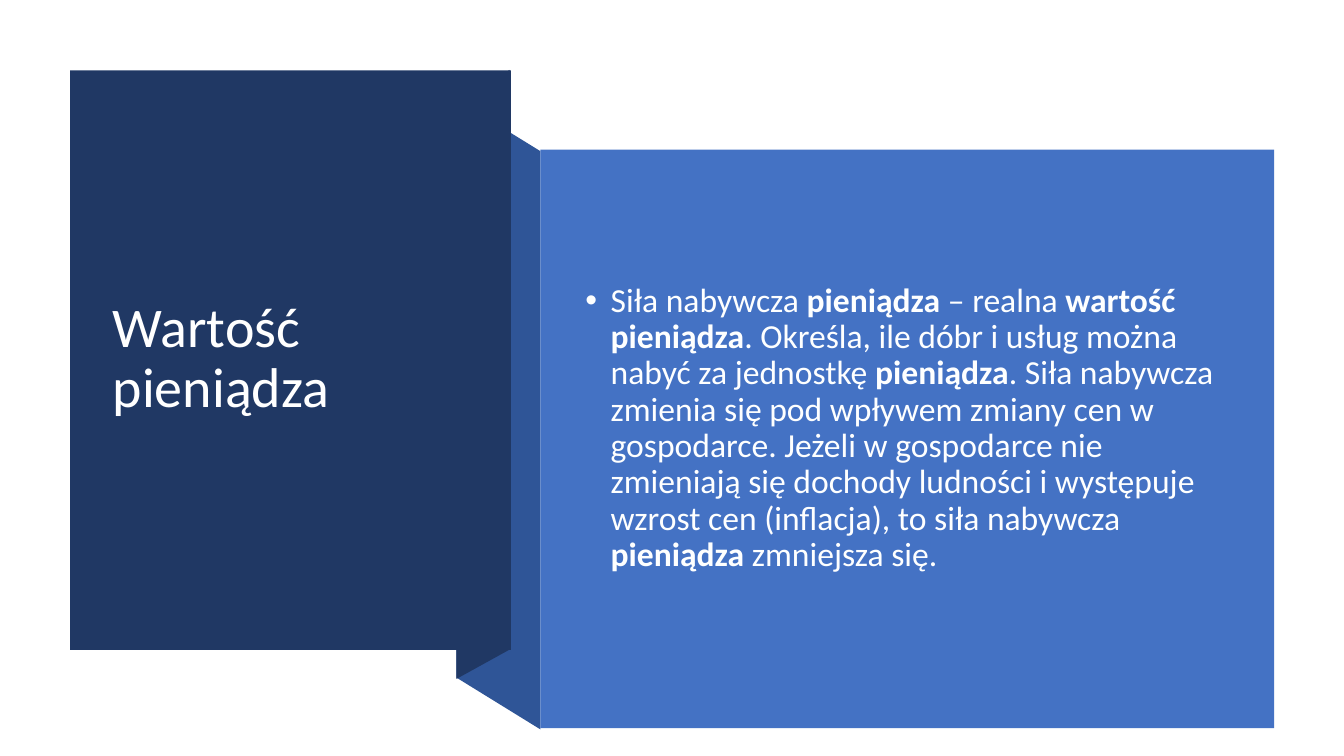
"""Builds a slide on the value of money with a folded two-panel banner."""
import pptx
import pptx.dml.color
import pptx.enum.shapes
import pptx.enum.text
import pptx.util
from dataclasses import dataclass
from lxml import etree

Pt = pptx.util.Pt
RGB = pptx.dml.color.RGBColor.from_string


@dataclass(frozen=True)
class Theme:
    navy: str = "203864"
    fold: str = "2F5597"
    blue: str = "4472C4"
    title_text: str = "FFFFFF"
    body_text: str = "FEFFFF"
    font: str = "Calibri"
    title_size: int = 40
    body_size: int = 24


theme = Theme()


def paint(shape, color):
    shape.shadow.inherit = False
    shape.fill.solid()
    shape.fill.fore_color.rgb = RGB(color)
    shape.line.fill.background()


def set_text_style(box, place, color, size):
    box.left, box.top, box.width, box.height = map(Pt, place)
    box.text_frame.word_wrap = True
    box.text_frame.auto_size = pptx.enum.text.MSO_AUTO_SIZE.NONE
    box.text_frame.vertical_anchor = pptx.enum.text.MSO_ANCHOR.MIDDLE
    para = box.text_frame.paragraphs[0]
    para.alignment = pptx.enum.text.PP_ALIGN.LEFT
    para.line_spacing = 0.9
    para.font.name = theme.font
    para.font.size = Pt(size)
    para.font.color.rgb = RGB(color)
    return para


deck = pptx.Presentation()
deck.slide_width, deck.slide_height = Pt(960), Pt(540)
page = deck.slides.add_slide(deck.slide_layouts[5])

folds = [
    (theme.fold, [(385.9, 520.6), (326.2, 483.8), (326.2, 71.3), (385.9, 108)]),
    (theme.navy, [(364.5, 463.7), (326.2, 484.6), (326.2, 70.6), (364.5, 49.7)]),
]
for color, corners in folds:
    builder = page.shapes.build_freeform(*corners[0], scale=Pt(1))
    builder.add_line_segments(corners[1:], close=True)
    paint(builder.convert_to_shape(), color)

panels = [
    (theme.navy, (50, 50.2, 314.9, 414)),
    (theme.blue, (385.9, 106.9, 524.2, 413.3)),
]
for color, place in panels:
    panel = page.shapes.add_shape(pptx.enum.shapes.MSO_SHAPE.RECTANGLE, *map(Pt, place))
    paint(panel, color)

title = page.shapes.title
title.text_frame.text = "Wartość pieniądza"
set_text_style(title, (73.4, 77, 267.1, 359.3), theme.title_text, theme.title_size)
panel.element.addnext(title.element)

body_place = (411.1, 135.4, 468.7, 341.3)
body = page.shapes.add_textbox(*map(Pt, body_place))
para = set_text_style(body, body_place, theme.body_text, theme.body_size)
para.space_before = Pt(10)
definition = [
    ("Siła nabywcza ", False),
    ("pieniądza", True),
    (" – realna ", False),
    ("wartość pieniądza", True),
    (". Określa, ile dóbr i usług można nabyć za jednostkę ", False),
    ("pieniądza", True),
    (". Siła nabywcza zmienia się pod wpływem zmiany cen w gospodarce. "
     "Jeżeli w gospodarce nie zmieniają się dochody ludności i występuje "
     "wzrost cen (inflacja), to siła nabywcza ", False),
    ("pieniądza", True),
    (" zmniejsza się.", False),
]
for text, bold in definition:
    span = para.add_run()
    span.text = text
    span.font.bold = bold

properties = para._p.get_or_add_pPr()
properties.set("marL", str(Pt(18)))
properties.set("indent", str(Pt(-18)))
namespace = "http://schemas.openxmlformats.org/drawingml/2006/main"
bullet_font = etree.Element(f"{{{namespace}}}buFont", typeface="Arial")
bullet = etree.Element(f"{{{namespace}}}buChar", char="•")
properties.find(f"{{{namespace}}}defRPr").addprevious(bullet_font)
bullet_font.addnext(bullet)

deck.save("out.pptx")
